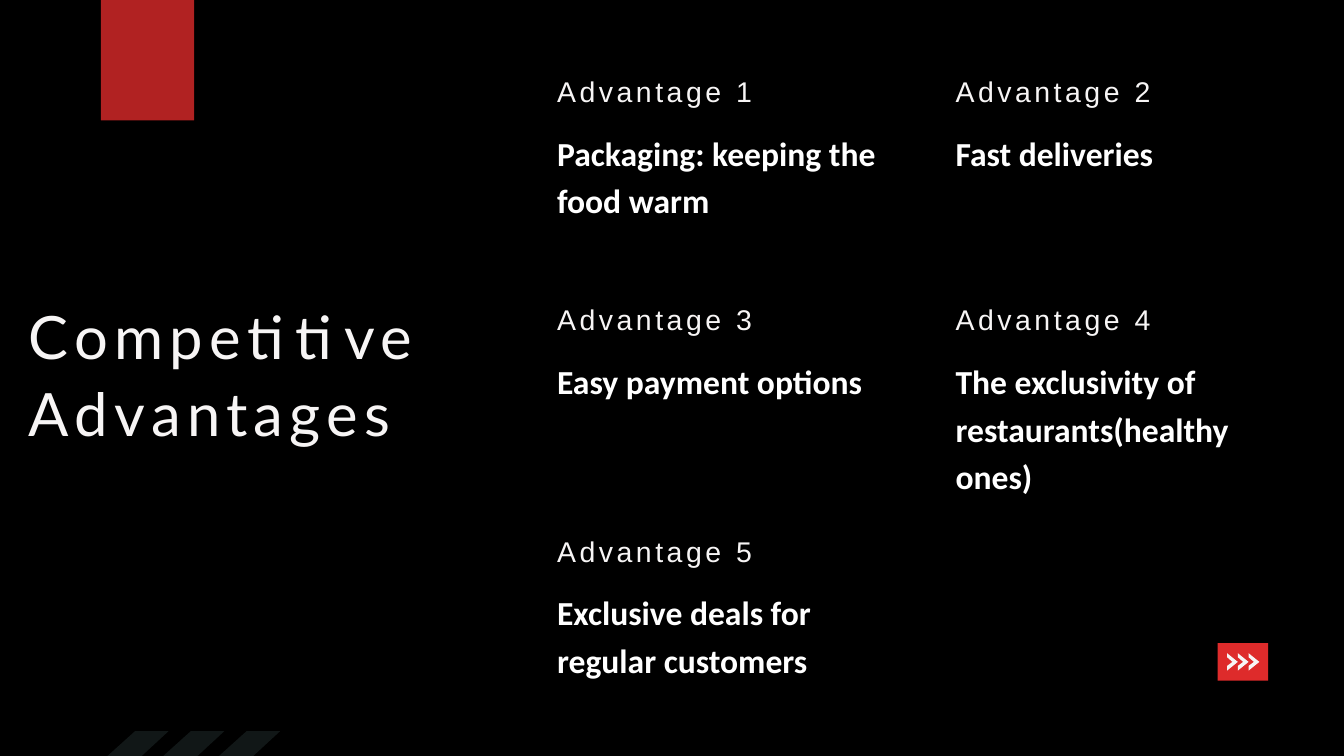
from typing import NamedTuple

from lxml.etree import SubElement
from pptx import Presentation
from pptx.dml.color import RGBColor
from pptx.enum.shapes import MSO_AUTO_SHAPE_TYPE as ShapeType
from pptx.enum.text import MSO_AUTO_SIZE as AutoSize
from pptx.oxml.ns import qn
from pptx.util import Inches, Pt

BLACK, WHITE, OFF_WHITE = "000000", "FFFFFF", "F7F5F5"
RED, DARK_GREY = "DE2B2B", "111717"

HEADING = {"size": Pt(30.5), "name": "Arial"}
BODY = {"size": Pt(36), "name": "Calibri", "bold": True}
TITLE = {"size": Pt(64), "name": "Lato"}

Point = tuple[float, float]


class Box(NamedTuple):
    left: float
    top: float
    width: float
    height: float


class Advantage(NamedTuple):
    text: str
    width: float
    height: float


ADVANTAGES = [
    Advantage("Packaging: keeping the food warm", 5.24, 2.22),
    Advantage("Fast deliveries", 3.27, 1.51),
    Advantage("Easy payment options", 4.98, 1.51),
    Advantage("The exclusivity of restaurants(healthy ones)", 4.49, 2.92),
    Advantage("Exclusive deals for regular customers", 4.19, 2.22),
]
COLUMNS = (8.28, 14.21)
ROWS = (1.08, 4.48, 7.92)


def rgb(colour: str) -> RGBColor:
    return RGBColor.from_string(colour)


def paint(shape, colour: str) -> None:
    shape.shadow.inherit = False
    shape.fill.solid()
    shape.fill.fore_color.rgb = rgb(colour)
    shape.line.fill.background()


def add_block(shapes, box: Box, colour: str):
    block = shapes.add_shape(ShapeType.RECTANGLE, *map(Inches, box))
    paint(block, colour)
    return block


def add_repeated_outline(shapes, outline: list[Point], count: int,
                         pitch: float, colour: str) -> None:
    """Draw one freeform holding the outline count times, pitch apart."""
    builder = None
    for step in range(count):
        start, *rest = [(Inches(x + step * pitch), Inches(y)) for x, y in outline]
        if builder is None:
            builder = shapes.build_freeform(*start)
        else:
            builder.move_to(*start)
        builder.add_line_segments(rest, close=True)
    paint(builder.convert_to_shape(), colour)


def add_text_frame(shapes, box: Box, top_inset: float):
    frame = shapes.add_textbox(*map(Inches, box)).text_frame
    settings = {
        "word_wrap": True, "auto_size": AutoSize.SHAPE_TO_FIT_TEXT,
        "margin_left": Inches(0.01), "margin_top": Inches(top_inset),
        "margin_right": 0, "margin_bottom": 0,
    }
    for name, value in settings.items():
        setattr(frame, name, value)
    return frame


def write(paragraph, text: str, style: dict, colour: str, before: float,
          leading: float = 1.0, tracking: float = 0) -> None:
    paragraph.space_before = Pt(before)
    paragraph.line_spacing = leading
    run = paragraph.add_run()
    run.text = text
    for name, value in style.items():
        setattr(run.font, name, value)
    run.font.color.rgb = rgb(colour)
    run._r.get_or_add_rPr().set("spc", str(round(tracking * 100)))


def add_advantage(shapes, index: int, advantage: Advantage) -> None:
    row, column = divmod(index, len(COLUMNS))
    box = Box(COLUMNS[column], ROWS[row], advantage.width, advantage.height)
    frame = add_text_frame(shapes, box, 0.02)
    write(frame.paragraphs[0], f"Advantage {index + 1}", HEADING, OFF_WHITE,
          before=1.4, tracking=3.8)
    write(frame.add_paragraph(), advantage.text, BODY, WHITE,
          before=18.5, leading=1.18)


def main() -> None:
    deck = Presentation()
    deck.slide_width, deck.slide_height = Inches(20), Inches(11.25)
    shapes = deck.slides.add_slide(deck.slide_layouts[6]).shapes

    # Backdrop and translucent red tab
    add_block(shapes, Box(0, 0, 20, 11.25), BLACK)
    tab = add_block(shapes, Box(1.5, 0, 1.39, 1.79), RED)
    tab_colour = tab.fill._xPr.find(f".//{qn('a:srgbClr')}")
    SubElement(tab_colour, qn("a:alpha")).set("val", "80000")

    # Title
    title = add_text_frame(shapes, Box(0.42, 4.36, 6.91, 2.27), 0.01)
    write(title.paragraphs[0], "Competitive Advantages", TITLE, OFF_WHITE,
          before=1, leading=1.08, tracking=6.8)

    # Next button with three chevrons
    button = shapes.add_group_shape().shapes
    add_block(button, Box(18.12, 9.57, 0.75, 0.56), RED)
    chevron = [(18.26, 9.98), (18.26, 9.91), (18.34, 9.85),
               (18.26, 9.78), (18.26, 9.72), (18.42, 9.85)]
    add_repeated_outline(button, chevron, 3, 0.16, OFF_WHITE)

    # Slanted stripes at the bottom edge
    stripe = [(2.11, 11.25), (1.6, 11.25), (2.01, 10.88), (2.51, 10.88)]
    add_repeated_outline(shapes, stripe, 3, 0.83, DARK_GREY)

    # Advantages, filled row by row
    for index, advantage in enumerate(ADVANTAGES):
        add_advantage(shapes, index, advantage)

    deck.save("out.pptx")


if __name__ == "__main__":
    main()
